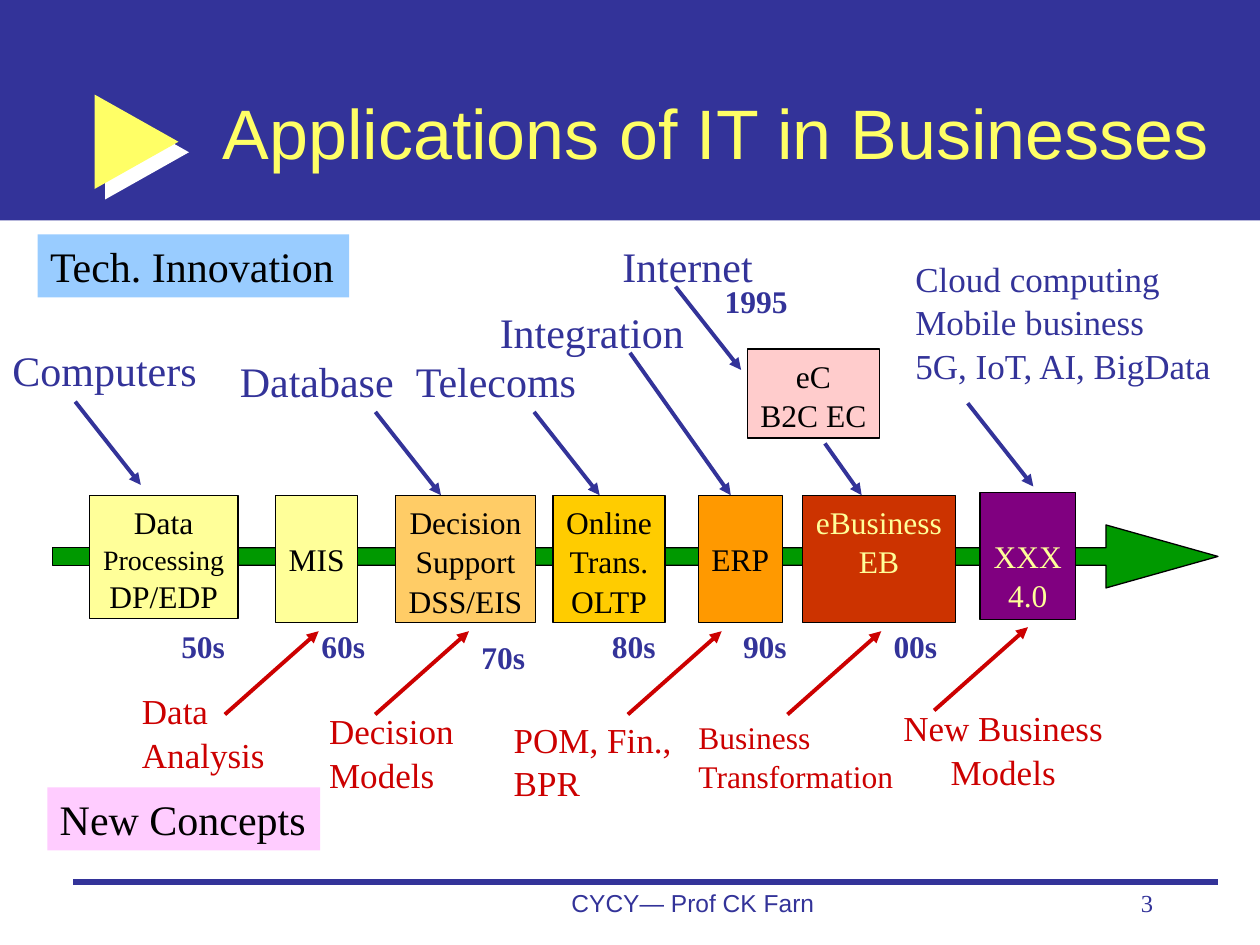
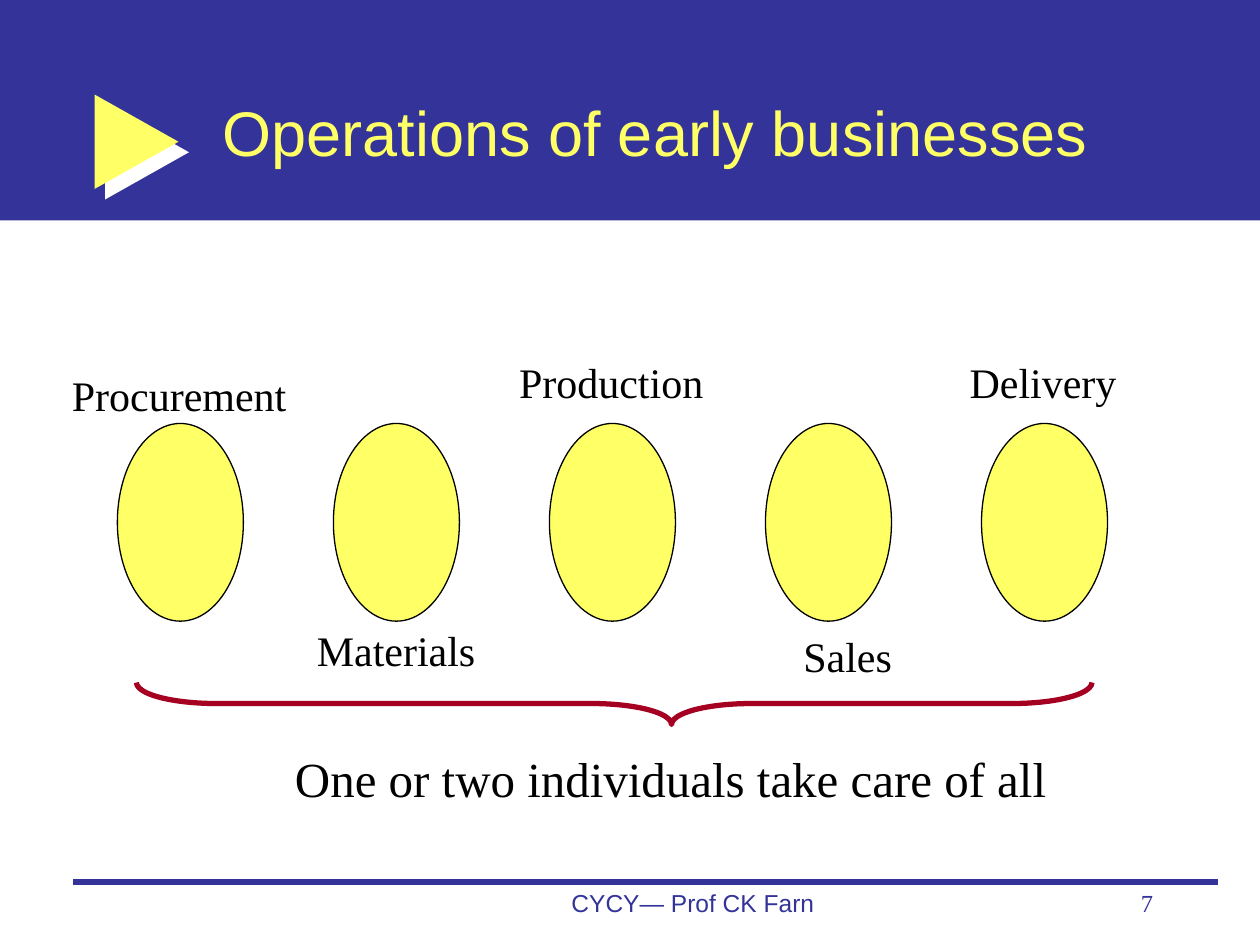
"""Build two slides on how information technology and business operations developed."""
import pptx
import pptx.chart.data
import pptx.dml.color
import pptx.enum.shapes
import pptx.enum.text
import pptx.oxml
import pptx.oxml.ns
import pptx.util

Pt = pptx.util.Pt
SHAPE = pptx.enum.shapes.MSO_SHAPE
STRAIGHT = pptx.enum.shapes.MSO_CONNECTOR.STRAIGHT
ALIGN = pptx.enum.text.PP_ALIGN
ANCHOR = pptx.enum.text.MSO_ANCHOR

THEME = {
    "navy": "333399", "yellow": "FFFF66", "white": "FFFFFF", "black": "000000",
    "red": "CC0000", "green": "009900", "pale": "FFFF99", "brace": "A50021",
    "sky": "99CCFF", "pink": "FFCCFF", "rose": "FFCCCC", "sand": "FFCC66",
    "gold": "FFCC00", "orange": "FF9900", "rust": "CC3300", "purple": "800080",
    "heading": "Arial", "body": "Times New Roman",
    "title": 40, "title_small": 36, "closing": 28, "label": 24, "note": 20,
    "box": 18, "box_small": 16, "footer": 14,
}


def write(sp, lines, size, color="black", font="body", bold=None,
          align=ALIGN.LEFT, anchor=ANCHOR.TOP, wrap=False):
    tf = sp.text_frame
    for key, value in {"word_wrap": wrap, "vertical_anchor": anchor, "margin_left": Pt(7.2),
                       "margin_right": Pt(7.2), "margin_top": Pt(3.6),
                       "margin_bottom": Pt(3.6)}.items():
        setattr(tf, key, value)
    lines = lines.split("\n")
    for i, line in enumerate(lines):
        p = tf.paragraphs[0] if i == 0 else tf.add_paragraph()
        p.alignment = align
        if len(lines) > 1:
            p.line_spacing = 1.04
        r = p.add_run()
        r.text = line
        for key, value in {"size": Pt(THEME[size]), "name": THEME[font], "bold": bold}.items():
            setattr(r.font, key, value)
        r.font.color.rgb = pptx.dml.color.RGBColor.from_string(THEME[color])


def paint(sp, fill=None, line=None, width=0.75, arrow=False):
    if fill:
        sp.fill.solid()
        sp.fill.fore_color.rgb = pptx.dml.color.RGBColor.from_string(THEME[fill])
    elif hasattr(sp, "fill"):
        sp.fill.background()
    if line:
        sp.line.color.rgb = pptx.dml.color.RGBColor.from_string(THEME[line])
        sp.line.width = Pt(width)
    else:
        sp.line.fill.background()
    if arrow:
        tail = pptx.oxml.parse_xml(
            f'<a:tailEnd {pptx.oxml.ns.nsdecls("a")} type="triangle"/>')
        sp.line._get_or_add_ln().append(tail)
    sp.element.spPr.append(
        pptx.oxml.parse_xml(f'<a:effectLst {pptx.oxml.ns.nsdecls("a")}/>'))


prs = pptx.Presentation()
prs.slide_width, prs.slide_height = Pt(720), Pt(540)
layout = prs.slide_layouts[5]

slides = []
for title, size, width, number in [
    ("Applications of IT in Businesses", "title", 581, "3"),
    ("Operations of early businesses", "title_small", 546, "7"),
]:
    s = prs.slides.add_slide(layout)
    slides.append(s)
    sp = s.shapes.title
    sp.left, sp.top, sp.width, sp.height = Pt(120), Pt(30), Pt(width), Pt(90)
    write(sp, title, size, "yellow", "heading", anchor=ANCHOR.MIDDLE, wrap=True)
    for text, x, w, font, align in [
        ("CYCY— Prof CK Farn", 282, 228, "heading", ALIGN.CENTER),
        (number, 516, 150, "body", ALIGN.RIGHT),
    ]:
        sp = s.shapes.add_textbox(Pt(x), Pt(504), Pt(w), Pt(36))
        write(sp, text, "footer", "navy", font, align=align, wrap=True)

s = slides[0]
band = s.shapes.add_shape(SHAPE.RECTANGLE, 0, 0, Pt(720), Pt(126))
paint(band, "navy")
shared = [band]
for offset, color in [(6, "white"), (0, "yellow")]:
    sp = s.shapes.add_shape(SHAPE.RIGHT_ARROW, Pt(54 + offset), Pt(54 + offset), Pt(48), Pt(54))
    sp.adjustments[0], sp.adjustments[1] = 0.384, 1
    paint(sp, color)
    shared.append(sp)
rule = s.shapes.add_connector(STRAIGHT, Pt(42), Pt(504), Pt(696), Pt(504))
paint(rule, line="navy", width=3)
shared.append(rule)
for i, sp in enumerate(shared):
    sp.element.xpath(".//p:cNvPr")[0].set("id", str(100 + i))
    layout.shapes.element.append(sp.element)

timeline = [
    [(631.5, 300), (631.5, 313.2), (134, 313.2), (134, 322.8), (631.5, 322.8),
     (631.5, 336), (696, 318)],
    [(71, 313.2), (71, 322.8), (113, 322.8), (113, 313.2)],
    [(30, 313.2), (30, 322.8), (51, 322.8), (51, 313.2)],
]
builder = s.shapes.build_freeform(*timeline[0][0], scale=Pt(1))
for i, outline in enumerate(timeline):
    if i:
        builder.move_to(*outline[0])
    builder.add_line_segments(outline[1:], close=True)
paint(builder.convert_to_shape(), "green", "black")

for text, x, y, w, h, fill, color, anchor in [
    ("Data\nProcessing\nDP/EDP", 51, 283, 85, 70.5, "pale", "black", ANCHOR.TOP),
    ("MIS", 157.5, 283, 47, 72.7, "pale", "black", ANCHOR.MIDDLE),
    ("Decision\nSupport\nDSS/EIS", 226, 283, 80, 72.7, "sand", "black", ANCHOR.TOP),
    ("Online\nTrans.\nOLTP", 316, 283, 64, 72.7, "gold", "black", ANCHOR.TOP),
    ("ERP", 399, 283, 48, 72.7, "orange", "black", ANCHOR.MIDDLE),
    ("eBusiness\nEB", 458.5, 283, 87.5, 72.7, "rust", "pale", ANCHOR.TOP),
    ("XXX\n4.0", 560, 281.5, 54.5, 72.7, "purple", "pale", ANCHOR.BOTTOM),
    ("eC\nB2C EC", 427, 199.4, 75.6, 51, "rose", "black", ANCHOR.TOP),
]:
    sp = s.shapes.add_shape(SHAPE.RECTANGLE, Pt(x), Pt(y), Pt(w), Pt(h))
    paint(sp, fill, "black")
    write(sp, text, "box", color, align=ALIGN.CENTER, anchor=anchor)
    for p in sp.text_frame.paragraphs:
        if p.text == "Processing":
            p.runs[0].font.size = Pt(THEME["box_small"])

for text, x, y, w, fill in [
    ("Tech. Innovation", 21.5, 134, 178, "sky"),
    ("New Concepts", 27, 450, 156, "pink"),
]:
    sp = s.shapes.add_shape(SHAPE.RECTANGLE, Pt(x), Pt(y), Pt(w), Pt(36))
    paint(sp, fill)
    write(sp, text, "label")

for text, x, y, w, h, size, color, bold, align in [
    ("Computers", 0, 193.5, 121, 36, "label", "navy", None, ALIGN.LEFT),
    ("Database", 130, 199.5, 103, 36, "label", "navy", None, ALIGN.LEFT),
    ("Telecoms", 230.5, 199.5, 106.5, 36, "label", "navy", None, ALIGN.LEFT),
    ("Integration", 278.5, 171.5, 121, 36, "label", "navy", None, ALIGN.LEFT),
    ("Internet", 348.5, 134, 90, 36, "label", "navy", None, ALIGN.LEFT),
    ("Cloud computing\nMobile business\n5G, IoT, AI, BigData", 516, 142.5, 185, 80,
     "note", "navy", None, ALIGN.LEFT),
    ("Data\nAnalysis", 74, 389.5, 85, 55.5, "note", "red", None, ALIGN.LEFT),
    ("Decision\nModels", 181, 401, 86.5, 55.5, "note", "red", None, ALIGN.LEFT),
    ("POM, Fin.,\nBPR", 286.5, 406, 105, 55.5, "note", "red", None, ALIGN.LEFT),
    ("Business\nTransformation", 392, 406, 126.5, 51, "box", "red", None, ALIGN.LEFT),
    ("New Business\nModels", 508.5, 399.5, 129.5, 55.5, "note", "red", None, ALIGN.CENTER),
    ("50s", 96.5, 355, 39.5, 29, "box", "navy", True, ALIGN.LEFT),
    ("60s", 176.5, 355, 39.5, 29, "box", "navy", True, ALIGN.LEFT),
    ("70s", 268, 361, 39.5, 29, "box", "navy", True, ALIGN.LEFT),
    ("80s", 342.5, 355, 39.5, 29, "box", "navy", True, ALIGN.LEFT),
    ("90s", 417.5, 355, 39.5, 29, "box", "navy", True, ALIGN.LEFT),
    ("00s", 503.5, 355, 39.5, 29, "box", "navy", True, ALIGN.LEFT),
    ("1995", 407, 157.5, 50.5, 29, "box", "navy", True, ALIGN.LEFT),
]:
    sp = s.shapes.add_textbox(Pt(x), Pt(y), Pt(w), Pt(h))
    write(sp, text, size, color, bold=bold, align=align)

tech, concept = (37.5, 47.6), (53.6, -47.6)
for x, y, (dx, dy), color in [
    (43, 229.5, tech, "navy"), (214.5, 235.4, tech, "navy"), (305.2, 235.4, tech, "navy"),
    (386, 163.8, tech, "navy"), (553, 230.4, tech, "navy"),
    (360, 201.6, (57.6, 81.4), "navy"), (471.4, 253.4, (21, 29.6), "navy"),
    (128.5, 408.3, concept, "red"), (214.4, 408.3, concept, "red"),
    (358.8, 408.3, concept, "red"), (450, 408.3, concept, "red"), (533.8, 406, concept, "red"),
]:
    sp = s.shapes.add_connector(STRAIGHT, Pt(x), Pt(y), Pt(x + dx), Pt(y + dy))
    paint(sp, line=color, width=2.25, arrow=True)

s = slides[1]
for i in range(5):
    sp = s.shapes.add_shape(SHAPE.OVAL, Pt(67.1 + 123.45 * i), Pt(242), Pt(72), Pt(113))
    paint(sp, "yellow", "black")

brace = s.shapes.add_shape(SHAPE.LEFT_BRACE, Pt(339), Pt(129), Pt(24), Pt(546))
brace.rotation = 270
brace.adjustments[0], brace.adjustments[1] = 1.896, 0.56
paint(brace, line="brace", width=3)

for text, x, y, w, h, size in [
    ("Procurement", 34, 207.5, 138, 36, "label"),
    ("Materials", 174, 353.5, 106, 36, "label"),
    ("Production", 289.5, 200, 121, 36, "label"),
    ("Sales", 452, 356.5, 65.5, 36, "label"),
    ("Delivery", 547, 200, 99.5, 36, "label"),
    ("One or two individuals take care of all", 161.5, 424, 448.5, 41, "closing"),
]:
    sp = s.shapes.add_textbox(Pt(x), Pt(y), Pt(w), Pt(h))
    write(sp, text, size)

prs.save("out.pptx")
